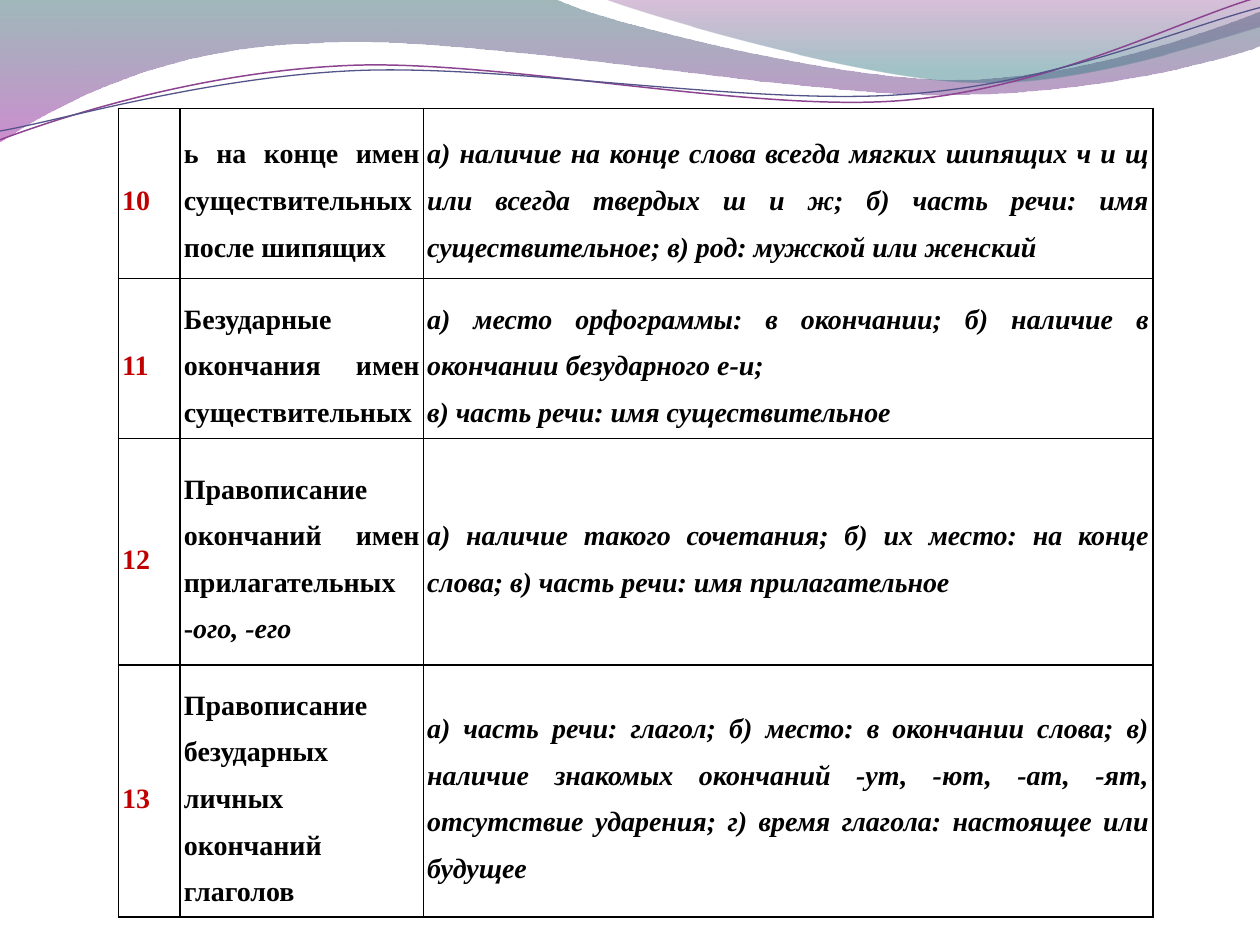
from dataclasses import dataclass
from math import cos, radians, sin

from lxml.etree import SubElement
from pptx import Presentation
from pptx.dml.color import RGBColor
from pptx.enum.text import MSO_ANCHOR, PP_ALIGN
from pptx.oxml import parse_xml
from pptx.oxml.ns import nsdecls, qn
from pptx.util import Inches, Pt


@dataclass(frozen=True)
class Theme:
    font: str = "Times New Roman"
    size: float = 16
    spacing: float = 1.5
    number: str = "C00000"
    text: str = "000000"
    border: str = "000000"
    border_width: float = 1


THEME = Theme()

# Table content: number, spelling rule, identifying signs.
# A cell is a list of paragraphs, a paragraph a list of (text, italic) runs.
ROWS = [
    ([[("10", False)]],
     [[("ь на конце имен существительных после шипящих", False)]],
     [[("а) наличие на конце слова всегда мягких шипящих ч и щ или всегда "
        "твердых ш и ж; б) часть речи: имя существительное; "
        "в) род: мужской или женский", True)]]),
    ([[("11", False)]],
     [[("Безударные окончания имен существительных", False)]],
     [[("а) место орфограммы: в окончании; б) наличие в окончании "
        "безударного е-и;", True)],
      [("в) часть речи: имя существительное", True)]]),
    ([[("12", False)]],
     [[("Правописание окончаний имен прилагательных", False)],
      [("-", False), ("ого, -его", True)]],
     [[("а) наличие такого сочетания; б) их место: на конце слова; "
        "в) часть речи: имя прилагательное", True)]]),
    ([[("13", False)]],
     [[("Правописание безударных личных окончаний глаголов", False)]],
     [[("а) часть речи: глагол; б) место: в окончании слова; в) наличие "
        "знакомых окончаний -ут, -ют, -ат, -ят, отсутствие ударения; "
        "г) время глагола: настоящее или будущее", True)]]),
]
COLUMN_WIDTHS = [0.49, 1.93, 5.79]
ROW_HEIGHTS = [1.35, 1.27, 1.8, 2]
TABLE_LEFT, TABLE_TOP = 0.94, 0.86

# Waves: frame (left, top, width, height), then steps on the slide, where
# two numbers are a straight step and six a Bezier curve.
# Gradient stops: (position, colour, opacity in percent).
BANDS = [
    ((-0.01, -0.01, 10.02, 1.14),
     [(0, 0), (4.4, -0.01),
      (4.76, 0.17, 6.64, 0.63, 7.58, 0.63), (8.53, 0.63, 9.58, 0.26, 10, 0.09),
      (10.01, 0.36),
      (9.83, 0.44, 8.7, 0.76, 7.46, 0.75), (6.22, 0.75, 3.82, 0.28, 2.57, 0.34),
      (1.29, 0.36, 0.46, 0.83, -0.01, 1.13), (0, 0)],
     [(0, "2D6368", 45), (1, "A530A9", 55)]),
    ((4.79, -0.01, 5.21, 0.7),
     [(4.79, -0.01),
      (5.09, 0.11, 6.82, 0.62, 7.69, 0.65), (8.56, 0.69, 9.61, 0.32, 10, 0.21),
      (10, 0), (4.79, -0.01)],
     [(0, "7F2F82", 30), (0.8, "2F7B82", 45)]),
]
STRAND_ROTATION = 357.3
STRANDS = [
    ((-0.02, 0.22, 10.02, 0.71),
     [(0, 1.11),
      (0.48, 0.93, 1.58, 0.57, 2.77, 0.52), (3.95, 0.47, 5.93, 0.89, 7.13, 0.8),
      (8.33, 0.71, 9.38, 0.15, 9.98, -0.02)], "8D4490", 0.85),
    ((-0.02, 0.3, 10.03, 0.58),
     [(0, 1.04),
      (0.47, 0.96, 1.64, 0.61, 2.83, 0.56), (4.03, 0.51, 5.97, 0.84, 7.17, 0.75),
      (8.36, 0.67, 9.41, 0.21, 10, 0.06)], "53548A", 0.75),
]


def rgb(colour):
    return RGBColor.from_string(colour)


def to_frame(x, y, frame, rotation):
    """Place a slide point in the coordinates of a rotated frame."""
    left, top, width, height = frame
    dx, dy = x - left - width / 2, y - top - height / 2
    turn = radians(-rotation)
    return (Inches(dx * cos(turn) - dy * sin(turn) + width / 2),
            Inches(dx * sin(turn) + dy * cos(turn) + height / 2))


def add_wave(page, frame, steps, close, rotation=0):
    points = [[to_frame(*step[i:i + 2], frame, rotation) for i in range(0, len(step), 2)]
              for step in steps]
    builder = page.shapes.build_freeform(*points[0][0])
    builder.add_line_segments([step[-1] for step in points[1:]], close=close)
    wave = builder.convert_to_shape()
    for name, value in zip(("left", "top", "width", "height"), frame):
        setattr(wave, name, Inches(value))
    wave.rotation = rotation
    wave.shadow.inherit = False
    # Redraw the outline inside the frame, with curves for the six-number steps
    outline = wave.element.spPr.find(".//" + qn("a:path"))
    outline.set("w", str(wave.width))
    outline.set("h", str(wave.height))
    for node in list(outline):
        outline.remove(node)
    for index, step in enumerate(points):
        kind = "moveTo" if index == 0 else "cubicBezTo" if len(step) == 3 else "lnTo"
        node = SubElement(outline, qn(f"a:{kind}"))
        for x, y in step:
            SubElement(node, qn("a:pt"), x=str(x), y=str(y))
    if close:
        SubElement(outline, qn("a:close"))
    return wave


def add_band(page, frame, steps, stops):
    band = add_wave(page, frame, steps, True)
    band.line.fill.background()
    band.fill.gradient()
    band.fill.gradient_angle = 270
    for stop, (position, colour, _) in zip(band.fill.gradient_stops, stops):
        stop.position = position
        stop.color.rgb = rgb(colour)
    gradient = band.element.spPr.find(qn("a:gradFill"))
    for node, (_, _, opacity) in zip(gradient.iter(qn("a:srgbClr")), stops):
        SubElement(node, qn("a:alpha")).set("val", str(opacity * 1000))


def add_strand(page, frame, steps, colour, width):
    strand = add_wave(page, frame, steps, False, STRAND_ROTATION)
    strand.fill.background()
    strand.line.color.rgb = rgb(colour)
    strand.line.width = Pt(width)


def format_cell(cell):
    values = {"vertical_anchor": MSO_ANCHOR.MIDDLE, "margin_left": Inches(0.03),
              "margin_right": Inches(0.03), "margin_top": 0, "margin_bottom": 0}
    for name, value in values.items():
        setattr(cell, name, value)
    cell.fill.background()
    properties = cell._tc.get_or_add_tcPr()
    for index, side in enumerate("LRTB"):
        properties.insert(index, parse_xml(
            f'<a:ln{side} {nsdecls("a")} w="{Pt(THEME.border_width)}"><a:solidFill>'
            f'<a:srgbClr val="{THEME.border}"/></a:solidFill></a:ln{side}>'))


def write_cell(cell, paragraphs, colour):
    frame = cell.text_frame
    for index, runs in enumerate(paragraphs):
        para = frame.add_paragraph() if index else frame.paragraphs[0]
        para.alignment = PP_ALIGN.JUSTIFY
        para.line_spacing = THEME.spacing
        for text, italic in runs:
            span = para.add_run()
            span.text = text
            values = {"name": THEME.font, "size": Pt(THEME.size), "bold": True, "italic": italic}
            for name, value in values.items():
                setattr(span.font, name, value)
            span.font.color.rgb = rgb(colour)


def add_rules_table(page):
    table = page.shapes.add_table(
        len(ROWS), len(COLUMN_WIDTHS), Inches(TABLE_LEFT), Inches(TABLE_TOP),
        Inches(sum(COLUMN_WIDTHS)), Inches(sum(ROW_HEIGHTS))).table
    table.first_row = table.horz_banding = False
    for column, width in zip(table.columns, COLUMN_WIDTHS):
        column.width = Inches(width)
    for row, height, contents in zip(table.rows, ROW_HEIGHTS, ROWS):
        row.height = Inches(height)
        for index, (cell, paragraphs) in enumerate(zip(row.cells, contents)):
            format_cell(cell)
            write_cell(cell, paragraphs, THEME.text if index else THEME.number)


def main():
    deck = Presentation()
    deck.slide_width, deck.slide_height = Inches(10), Inches(7.5)
    page = deck.slides.add_slide(deck.slide_layouts[6])
    # Wave decoration
    for band in BANDS:
        add_band(page, *band)
    for strand in STRANDS:
        add_strand(page, *strand)
    # Spelling rules
    add_rules_table(page)
    deck.save("out.pptx")


if __name__ == "__main__":
    main()
